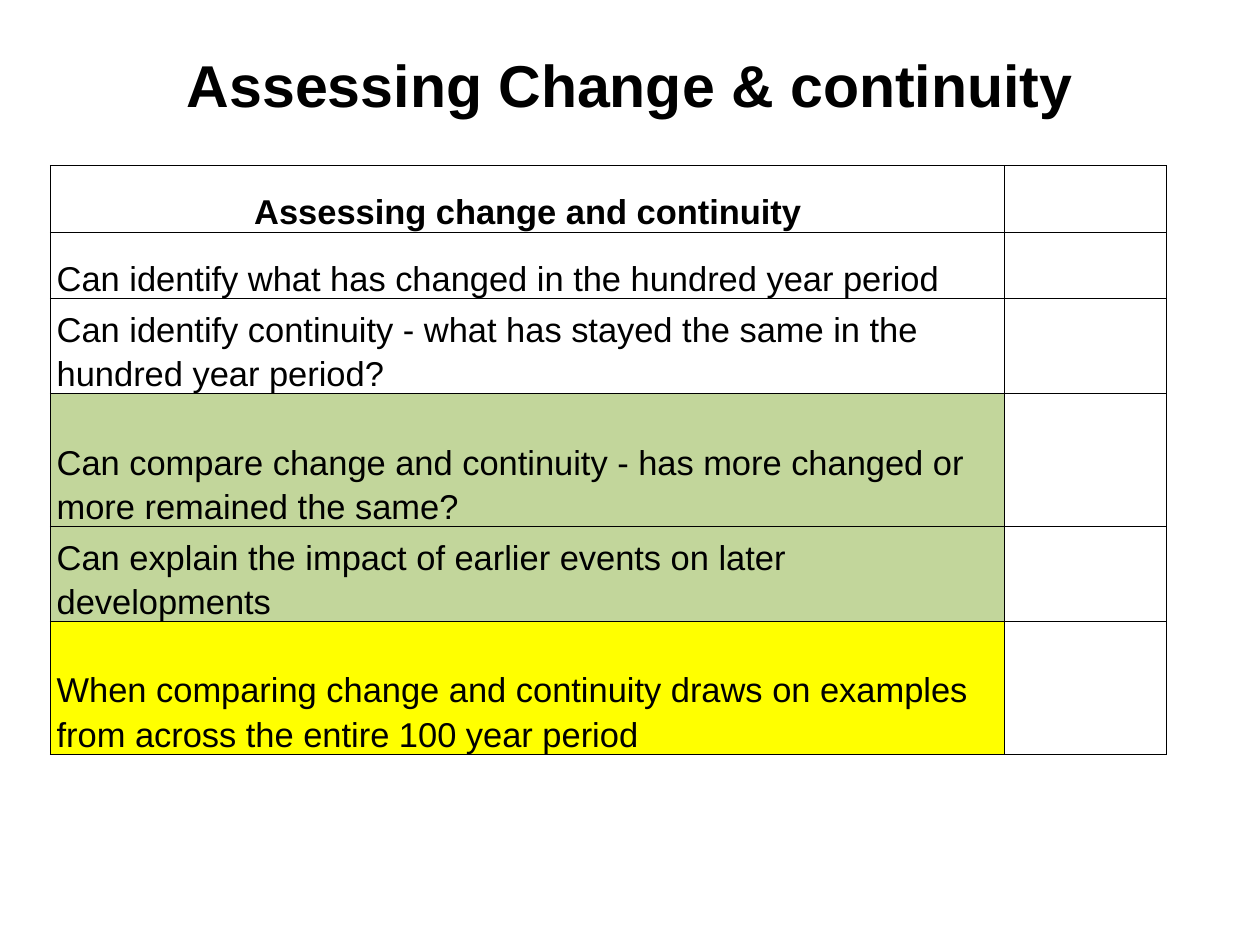
from lxml import etree
from pptx import Presentation
from pptx.dml.color import RGBColor
from pptx.enum.text import MSO_ANCHOR, PP_ALIGN
from pptx.oxml.ns import qn
from pptx.util import Inches, Pt

BLACK = RGBColor(0, 0, 0)
GREEN = RGBColor(0xC2, 0xD6, 0x9B)
YELLOW = RGBColor(0xFF, 0xFF, 0)

TITLE = "Assessing Change & continuity"
HEADING = "Assessing change and continuity"
# Text, row height in inches, fill
CRITERIA = [
    (HEADING, 0.75, None),
    ("Can identify what has changed in the hundred year period", 0.75, None),
    ("Can identify continuity - what has stayed the same in the hundred year period?", 0.75, None),
    ("Can compare change and continuity - has more changed or more remained the same?", 1.5, GREEN),
    ("Can explain the impact of earlier events on later developments", 0.75, GREEN),
    ("When comparing change and continuity draws on examples from across the entire 100 year period",
     1.5, YELLOW),
]
COLUMN_WIDTHS = [10.77, 1.83]
TABLE_LEFT, TABLE_TOP = 0.57, 1.87


def write(text_frame, text, size, bold=False, align=PP_ALIGN.LEFT, spacing=None):
    text_frame.word_wrap = True
    paragraph = text_frame.paragraphs[0]
    paragraph.alignment = align
    paragraph.line_spacing = spacing
    run = paragraph.add_run()
    run.text = text
    run.font.name = "Arial"
    run.font.size = Pt(size)
    run.font.bold = bold
    run.font.color.rgb = BLACK


def add_borders(cell, width=1):
    properties = cell._tc.get_or_add_tcPr()
    for side in ("a:lnL", "a:lnR", "a:lnT", "a:lnB"):
        line = etree.SubElement(properties, qn(side), w=str(Pt(width)))
        fill = etree.SubElement(line, qn("a:solidFill"))
        etree.SubElement(fill, qn("a:srgbClr"), val=str(BLACK))


def format_cell(cell, color):
    add_borders(cell)
    if color is None:
        cell.fill.background()
    else:
        cell.fill.solid()
        cell.fill.fore_color.rgb = color
    cell.vertical_anchor = MSO_ANCHOR.BOTTOM
    cell.margin_left = cell.margin_right = Inches(0.07)
    cell.margin_top = cell.margin_bottom = 0


def add_title(slide):
    box = slide.shapes.add_textbox(Inches(0.71), Inches(0.43), Inches(12.8), Inches(1.78))
    box.text_frame.margin_top = Inches(0.12)
    write(box.text_frame, TITLE, 48, bold=True, align=PP_ALIGN.CENTER)


def add_criteria_table(slide):
    height = sum(row_height for _, row_height, _ in CRITERIA)
    table = slide.shapes.add_table(
        len(CRITERIA), len(COLUMN_WIDTHS), Inches(TABLE_LEFT), Inches(TABLE_TOP),
        Inches(sum(COLUMN_WIDTHS)), Inches(height)).table
    table.first_row = table.horz_banding = False
    for column, width in zip(table.columns, COLUMN_WIDTHS):
        column.width = Inches(width)
    for row, (text, row_height, color) in zip(table.rows, CRITERIA):
        row.height = Inches(row_height)
        criterion, mark = row.cells
        format_cell(criterion, color)
        format_cell(mark, None)
        is_heading = text == HEADING
        write(criterion.text_frame, text, 28, bold=is_heading, spacing=1.15,
              align=PP_ALIGN.CENTER if is_heading else PP_ALIGN.LEFT)


def main():
    presentation = Presentation()
    presentation.slide_width = Inches(14.22)
    presentation.slide_height = Inches(10.67)
    slide = presentation.slides.add_slide(presentation.slide_layouts[6])
    add_title(slide)
    add_criteria_table(slide)
    presentation.save("out.pptx")


if __name__ == "__main__":
    main()
